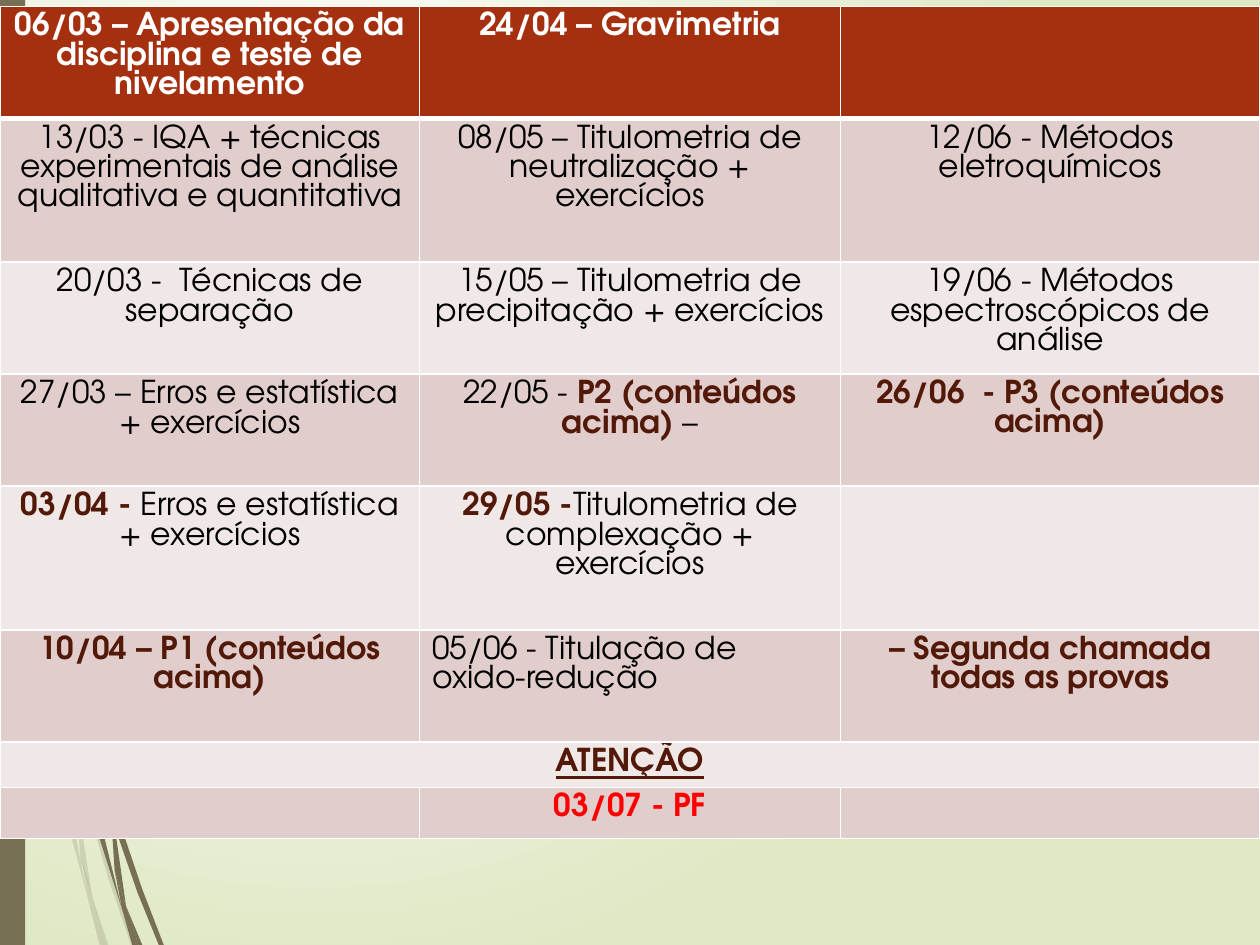
from lxml import etree
from pptx import Presentation
from pptx import util as u
from pptx.dml.color import RGBColor
from pptx.enum import shapes, text
from pptx.oxml.ns import qn

PX = u.Inches(1) // 100  # one px is a hundredth of an inch
FONT = "TeX Gyre Adventor"
OLIVE, RUST, ROSE, PALE, WHITE = "766F54", "A53010", "E1CDCC", "F0E8E7", "FFFFFF"

HEAD = {"color": WHITE, "bold": True}
PLAIN = {"color": "000000", "bold": False}
STRONG = {"color": "521808", "bold": True}
NOTICE = {**STRONG, "underline": True}
FINAL = {"color": "FF0000", "bold": True}

# Corners of the grass blades, by opacity in percent
BLADES = {
    20: [
        [(61, 596), (61, 610), (85, 694), (104, 750), (108, 750), (88, 692)],
        [(73, 711), (83, 750), (86, 750)],
        [(8, 350), (22, 469), (64, 683), (70, 714), (45, 621)],
        [(58, 599), (64, 683), (73, 711), (63, 646)],
        [(70, 714), (79, 750), (82, 750)],
        [(65, 683), (70, 714), (82, 750), (83, 750), (73, 711)],
    ],
    100: [
        [(91, 641), (91, 656), (109, 708), (126, 750), (130, 750), (113, 706)],
        [(47, 477), (60, 556), (81, 657), (97, 722), (77, 659)],
        [(100, 719), (110, 750), (113, 750)],
        [(88, 645), (91, 691), (100, 719), (91, 656)],
        [(97, 722), (105, 750), (108, 750)],
        [(91, 691), (97, 722), (108, 750), (110, 750), (100, 719)],
    ],
}

# Each cell is a list of (words, format) runs
SCHEDULE = [
    [[("06/03 – Apresentação da disciplina e teste de nivelamento", HEAD)],
     [("24/04 – Gravimetria", HEAD)], []],
    [[("13/03 - IQA + técnicas experimentais de análise qualitativa e quantitativa", PLAIN)],
     [("08/05 – Titulometria de neutralização + exercícios", PLAIN)],
     [("12/06 - Métodos eletroquímicos", PLAIN)]],
    [[("20/03 -  Técnicas de separação", PLAIN)],
     [("15/05 – Titulometria de precipitação + exercícios", PLAIN)],
     [("19/06 - Métodos espectroscópicos de análise", PLAIN)]],
    [[("27/03 – Erros e estatística + exercícios", PLAIN)],
     [("22/05 - ", PLAIN), ("P2 (conteúdos acima)", STRONG), (" –", PLAIN)],
     [("26/06  - P3 (conteúdos acima)", STRONG)]],
    [[("03/04 - ", STRONG), ("Erros e estatística + exercícios", PLAIN)],
     [("29/05 -", STRONG), ("Titulometria de complexação + exercícios", PLAIN)], []],
    [[("10/04 – P1 (conteúdos acima)", STRONG)],
     [("05/06 - Titulação de oxido-redução", PLAIN)],
     [("– Segunda chamada todas as provas", STRONG)]],
    [[("ATENÇÃO", NOTICE)], [], []],
    [[], [("03/07 - PF", FINAL)], []],
]
COLUMNS = [333, 334, 333]
ROWS = [89, 114, 89, 89, 114, 89, 36, 36]
ATTENTION_ROW = 6
LEFT_ALIGNED = (5, 1)


def rgb(value):
    return RGBColor.from_string(value)


class Deck:
    def __init__(self, width, height):
        self.prs = Presentation()
        self.prs.slide_width, self.prs.slide_height = width * PX, height * PX
        self.slide = self.prs.slides.add_slide(self.prs.slide_layouts[6])

    def background(self, inner, outer):
        fill = self.slide.background.fill
        fill.gradient()
        for stop, color in zip(fill.gradient_stops, (inner, outer)):
            stop.color.rgb = rgb(color)
        gradient = self.slide._element.find(".//" + qn("a:gradFill"))
        gradient.remove(gradient.find(qn("a:lin")))
        circle = etree.SubElement(gradient, qn("a:path"), path="circle")
        etree.SubElement(circle, qn("a:fillToRect"), l="50000", t="50000", r="100000", b="100000")

    def paint(self, shape, color, alpha=100):
        shape.shadow.inherit = False
        shape.fill.solid()
        shape.fill.fore_color.rgb = rgb(color)
        shape.line.fill.background()
        if alpha < 100:
            tint = shape._element.spPr.find(".//" + qn("a:srgbClr"))
            etree.SubElement(tint, qn("a:alpha"), val=str(alpha * 1000))

    def bar(self, x, y, w, h, color):
        box = [n * PX for n in (x, y, w, h)]
        self.paint(self.slide.shapes.add_shape(shapes.MSO_SHAPE.RECTANGLE, *box), color)

    def blade(self, corners, color, alpha):
        start, *rest = corners
        builder = self.slide.shapes.build_freeform(*start, scale=PX)
        builder.add_line_segments(rest, close=True)
        self.paint(builder.convert_to_shape(), color, alpha)

    def table(self, x, y, columns, rows):
        size = [n * PX for n in (x, y, sum(columns), sum(rows))]
        table = self.slide.shapes.add_table(len(rows), len(columns), *size).table
        for column, width in zip(table.columns, columns):
            column.width = width * PX
        for row, height in zip(table.rows, rows):
            row.height = height * PX
        return table

    def cell(self, cell, runs, fill, align, bottom=1):
        properties = cell._tc.get_or_add_tcPr()
        for side, points in zip("LRTB", (1, 1, 1, bottom)):
            border = etree.SubElement(properties, qn("a:ln" + side), w=str(u.Pt(points)))
            solid = etree.SubElement(border, qn("a:solidFill"))
            etree.SubElement(solid, qn("a:srgbClr"), val=WHITE)
        cell.fill.solid()
        cell.fill.fore_color.rgb = rgb(fill)
        line = cell.text_frame.paragraphs[0]
        line.alignment = align
        for words, look in runs:
            run = line.add_run()
            run.text = words
            style = {"name": FONT, "size": u.Pt(18), **look}
            run.font.color.rgb = rgb(style.pop("color"))
            for key, value in style.items():
                setattr(run.font, key, value)


def main():
    deck = Deck(1000, 750)
    deck.background(WHITE, "DFE8C4")

    # Grass and side bar
    for opacity, blades in BLADES.items():
        for corners in blades:
            deck.blade(corners, OLIVE, opacity)
    deck.bar(0, 0, 20, 750, OLIVE)

    # Course schedule
    schedule = deck.table(0, 5, COLUMNS, ROWS)
    for r, entries in enumerate(SCHEDULE):
        fill = RUST if r == 0 else ROSE if r % 2 else PALE
        for c, runs in enumerate(entries):
            align = text.PP_ALIGN.LEFT if (r, c) == LEFT_ALIGNED else text.PP_ALIGN.CENTER
            deck.cell(schedule.cell(r, c), runs, fill, align, bottom=1 if r else 3)
    schedule.cell(ATTENTION_ROW, 0).merge(schedule.cell(ATTENTION_ROW, 2))

    deck.prs.save("out.pptx")


if __name__ == "__main__":
    main()
